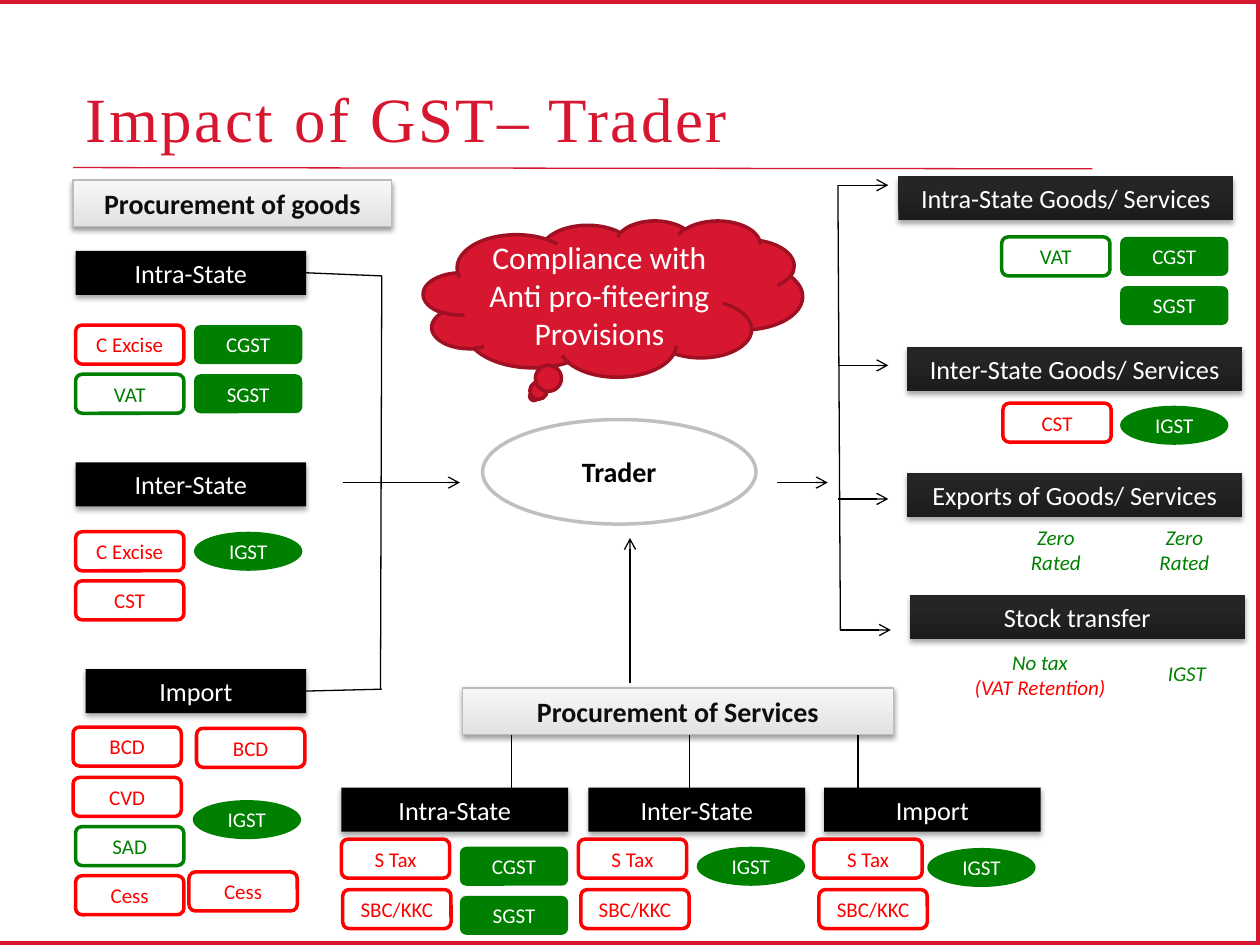
from lxml import etree
from pptx import Presentation
from pptx import util as u
from pptx.dml.color import RGBColor
from pptx.enum import shapes, text
from pptx.oxml import ns

PX = 9144
RED = RGBColor(0xFF, 0, 0)
GREEN = RGBColor(0, 0x80, 0)
BRAND = RGBColor(0xD7, 0x16, 0x2F)
MAROON = RGBColor(0x9F, 0x10, 0x23)
BLACK = RGBColor(0, 0, 0)
WHITE = RGBColor(0xFF, 0xFF, 0xFF)
INK = RGBColor(0x0D, 0x0D, 0x0D)
GREY = RGBColor(0xBB, 0xBB, 0xBB)
SILVER = RGBColor(0xBF, 0xBF, 0xBF)
PALE = (RGBColor(0xE2, 0xE2, 0xE2), RGBColor(0xF7, 0xF7, 0xF7), 1)
DARK = (RGBColor(0x1C, 0x1C, 0x1C), RGBColor(0x25, 0x25, 0x25), 0.8)

KIND = shapes.MSO_SHAPE
RECT, ROUND, OVAL = KIND.RECTANGLE, KIND.ROUNDED_RECTANGLE, KIND.OVAL
TAX = (ROUND, None, RED, RED, False)
VAT = (ROUND, None, GREEN, GREEN, False)
GST = (ROUND, GREEN, None, WHITE, False)
IGST = (OVAL, GREEN, None, WHITE, False)
NOTE = (ROUND, None, None, GREEN, True)


def add_effect(shape, shade=None):
    props = shape._element.spPr
    effect = etree.SubElement(props, ns.qn("a:effectLst"))
    if shade:
        outer = etree.SubElement(effect, ns.qn("a:outerShdw"), blurRad="39370",
                                 dist="22860", dir="5400000", rotWithShape="0")
        color = etree.SubElement(outer, ns.qn("a:srgbClr"), val="000000")
        etree.SubElement(color, ns.qn("a:alpha"), val=str(shade * 1000))


def paint(shape, fill):
    if fill is None:
        shape.fill.background()
    elif isinstance(fill, RGBColor):
        shape.fill.solid()
        shape.fill.fore_color.rgb = fill
    else:
        shape.fill.gradient()
        shape.fill.gradient_angle = 90
        first, last = shape.fill.gradient_stops
        first.color.rgb, last.color.rgb, last.position = fill
        first.position = 0


def add_box(slide, kind, box, fill, edge, width=2, shade=None):
    shape = slide.shapes.add_shape(kind, *(n * PX for n in box))
    paint(shape, fill)
    if edge is None:
        shape.line.fill.background()
    else:
        shape.line.color.rgb = edge
        shape.line.width = u.Pt(width)
    add_effect(shape, shade)
    return shape


def write(shape, words, size, color, bold=False, italic=False):
    frame = shape.text_frame
    frame.word_wrap = True
    frame.vertical_anchor = text.MSO_ANCHOR.MIDDLE
    frame.text = words
    for para in frame.paragraphs:
        para.alignment = text.PP_ALIGN.CENTER
        font = para.font
        font.name, font.size, font.bold, font.italic = "Calibri", u.Pt(size), bold, italic
        font.color.rgb = color


def add_line(slide, x1, y1, x2, y2, color=BLACK, arrow=False):
    line = slide.shapes.add_connector(shapes.MSO_CONNECTOR.STRAIGHT,
                                      *(n * PX for n in (x1, y1, x2, y2)))
    line.line.color.rgb = color
    line.line.width = u.Pt(0.75)
    if arrow:
        etree.SubElement(line.line._get_or_add_ln(), ns.qn("a:tailEnd"), type="arrow")
    add_effect(line)
    return line


def add_head(slide, x, y, w, words):
    head = add_box(slide, RECT, (x, y, w, 37), PALE, GREY, 0.75, 38)
    write(head, words, 16, INK, bold=True)


def add_group(slide, x, y, w, name, fill, tags):
    bar = add_box(slide, RECT, (x, y, w, 35), fill, None, shade=35)
    write(bar, name, 15, WHITE)
    for dx, dy, words, (kind, back, edge, color, italic) in tags:
        tag = add_box(slide, kind, (x + dx, y + dy, 86, 31), back, edge)
        write(tag, words, 12, color, italic=italic)
    return bar


def add_frame(slide):
    add_line(slide, 58, 133, 867, 134, BRAND)
    add_box(slide, RECT, (-4, 0, 1004, 750), None, BRAND, 4.5)


def add_title(slide, x, y, w, h):
    title = slide.shapes.title
    title.left, title.top, title.width, title.height = (n * PX for n in (x, y, w, h))
    frame = title.text_frame
    frame.text = "Impact of GST– Trader"
    frame.auto_size = text.MSO_AUTO_SIZE.NONE
    frame.vertical_anchor = text.MSO_ANCHOR.BOTTOM
    para = frame.paragraphs[0]
    para.alignment = text.PP_ALIGN.LEFT
    para.font.name, para.font.size = "Times New Roman", u.Pt(36)
    para.font.color.rgb = BRAND
    para.runs[0]._r.get_or_add_rPr().set("spc", "150")


def add_goods(slide, x, y):
    add_head(slide, x, y, 253, "Procurement of goods")
    top = add_group(slide, x + 2, y + 56, 183, "Intra-State", BLACK, [
        (0, 59, "C Excise", TAX), (94, 59, "CGST", GST),
        (0, 98, "VAT", VAT), (94, 98, "SGST", GST)])
    add_group(slide, x + 2, y + 224, 183, "Inter-State", BLACK, [
        (0, 55, "C Excise", TAX), (94, 55, "IGST", IGST), (0, 94, "CST", TAX)])
    low = add_group(slide, x + 10, y + 388, 175, "Import", BLACK, [
        (-10, 46, "BCD", TAX), (88, 47, "BCD", TAX), (-10, 86, "CVD", TAX),
        (85, 104, "IGST", IGST), (-8, 125, "SAD", VAT),
        (-8, 164, "Cess", TAX), (82, 161, "Cess", TAX)])
    add_line(slide, x + 245, y + 76, x + 244, y + 404)
    for bar, end in ((top, y + 76), (low, y + 404)):
        link = add_line(slide, x + 245, end, x + 185, end)
        link.end_connect(bar, 3)
    add_line(slide, x + 214, y + 240, x + 307, y + 240, arrow=True)


def add_services(slide, x, y):
    for dx in (135, 276, 410):
        add_line(slide, x + dx, y + 34, x + dx, y + 81)
    add_head(slide, x + 96, y, 342, "Procurement of Services")
    add_group(slide, x, y + 79, 180, "Intra-State", BLACK, [
        (0, 41, "S Tax", TAX), (94, 47, "CGST", GST),
        (1, 81, "SBC/KKC", TAX), (94, 86, "SGST", GST)])
    add_group(slide, x + 196, y + 79, 172, "Inter-State", BLACK, [
        (-8, 41, "S Tax", TAX), (86, 47, "IGST", IGST), (-6, 81, "SBC/KKC", TAX)])
    add_group(slide, x + 383, y + 79, 172, "Import", BLACK, [
        (-8, 41, "S Tax", TAX), (82, 48, "IGST", IGST), (-4, 81, "SBC/KKC", TAX)])
    add_line(slide, x + 229, y - 4, x + 229, y - 119, arrow=True)


def add_sales(slide, x, y):
    add_line(slide, x, y + 7, x + 2, y + 360)
    for dx, dy in ((0, 7), (0, 150), (0, 256), (2, 360)):
        add_line(slide, x + dx, y + dy, x + dx + 40, y + dy, arrow=True)
    add_group(slide, x + 48, y, 266, "Intra-State Goods/ Services", DARK, [
        (82, 48, "VAT", VAT), (176, 48, "CGST", GST), (176, 87, "SGST", GST)])
    add_group(slide, x + 55, y + 135, 266, "Inter-State Goods/ Services", DARK, [
        (76, 45, "CST", TAX), (169, 47, "IGST", IGST)])
    add_group(slide, x + 55, y + 235, 266, "Exports of Goods/ Services", DARK, [
        (75, 46, "Zero Rated", NOTE), (177, 46, "Zero Rated", NOTE)])
    add_group(slide, x + 57, y + 332, 266, "Stock transfer", DARK, [
        (177, 47, "IGST", NOTE)])
    note = add_box(slide, ROUND, (x + 92, y + 375, 137, 41), None, None)
    write(note, "No tax\n(VAT Retention)", 12, GREEN, italic=True)
    note.text_frame.paragraphs[1].font.color.rgb = RED


def add_trader(slide, x, y):
    hub = add_box(slide, OVAL, (x + 47, y + 158, 217, 83), WHITE, SILVER)
    write(hub, "Trader", 16, BLACK, bold=True)
    cloud = add_box(slide, KIND.CLOUD_CALLOUT, (x, y, 301, 124), BRAND, MAROON)
    write(cloud, "Compliance with Anti pro-fiteering Provisions", 18, WHITE)
    add_line(slide, x + 281, y + 208, x + 321, y + 208, arrow=True)


def main():
    deck = Presentation()
    deck.slide_width, deck.slide_height = 1000 * PX, 750 * PX
    slide = deck.slides.add_slide(deck.slide_layouts[5])
    add_frame(slide)
    add_title(slide, 58, 45, 942, 83)
    add_goods(slide, 58, 143)
    add_services(slide, 271, 546)
    add_sales(slide, 665, 140)
    add_trader(slide, 336, 175)
    deck.save("out.pptx")


if __name__ == "__main__":
    main()
